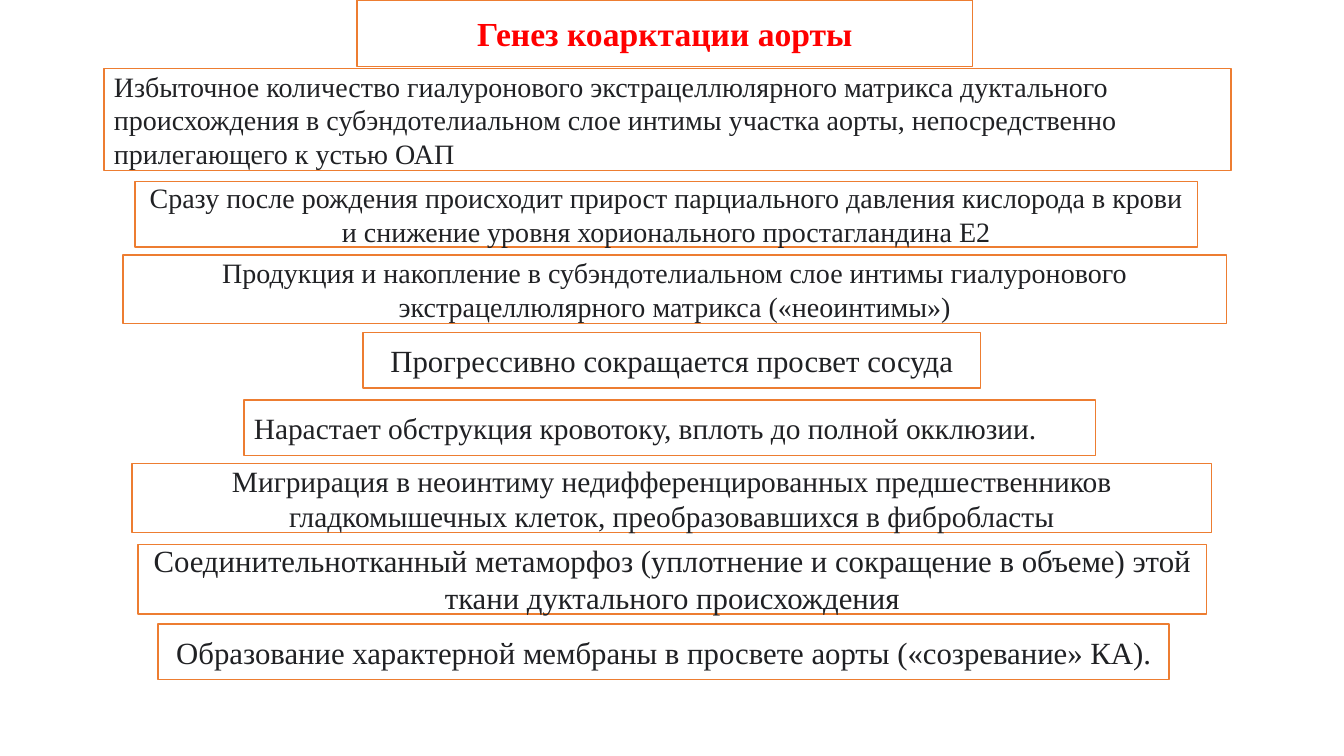
from dataclasses import dataclass

from pptx import Presentation
from pptx.dml.color import RGBColor
from pptx.enum.shapes import MSO_SHAPE
from pptx.enum.text import MSO_ANCHOR, MSO_AUTO_SIZE, PP_ALIGN
from pptx.util import Pt

RECT = MSO_SHAPE.RECTANGLE
MIDDLE = MSO_ANCHOR.MIDDLE
FIXED = MSO_AUTO_SIZE.NONE
LEFT, CENTER = PP_ALIGN.LEFT, PP_ALIGN.CENTER


@dataclass(frozen=True)
class Theme:
    font: str = "Times New Roman"
    paper: RGBColor = RGBColor(0xFF, 0xFF, 0xFF)
    edge: RGBColor = RGBColor(0xED, 0x7D, 0x31)
    ink: RGBColor = RGBColor(0x20, 0x21, 0x24)
    head: RGBColor = RGBColor(0xFF, 0x00, 0x00)
    title: int = 24
    large: int = 22
    mid: int = 21
    small: int = 20


THEME = Theme()
TITLE = "Генез коарктации аорты"
STAGES = [
    ((74.2, 49, 805, 72.7), THEME.small, LEFT,
     "Избыточное количество гиалуронового экстрацеллюлярного матрикса дуктального "
     "происхождения в субэндотелиальном слое интимы участка аорты, непосредственно "
     "прилегающего к устью ОАП"),
    ((96.5, 129.6, 759, 46.8), THEME.small, CENTER,
     "Сразу после рождения происходит прирост парциального давления кислорода в крови "
     "и снижение уровня хорионального простагландина Е2"),
    ((87.8, 182.2, 788.4, 49), THEME.small, CENTER,
     "Продукция и накопление в субэндотелиальном слое интимы гиалуронового "
     "экстрацеллюлярного матрикса («неоинтимы»)"),
    ((259.2, 237.6, 441.4, 39.6), THEME.large, CENTER,
     "Прогрессивно сокращается просвет сосуда"),
    ((174.2, 285.8, 608.4, 39.6), THEME.mid, LEFT,
     "Нарастает обструкция кровотоку, вплоть до полной окклюзии."),
    ((94.3, 331.2, 771.1, 49), THEME.mid, CENTER,
     "Мигрирация в неоинтиму недифференцированных предшественников "
     "гладкомышечных клеток, преобразовавшихся в фибробласты"),
    ((98.6, 388.8, 763.2, 49.7), THEME.large, CENTER,
     "Соединительнотканный метаморфоз (уплотнение и сокращение в объеме) этой "
     "ткани дуктального происхождения"),
    ((113, 445.7, 722.2, 39.6), THEME.large, CENTER,
     "Образование характерной мембраны в просвете аорты («созревание» КА)."),
]


def apply(target, values):
    for name, value in values.items():
        setattr(target, name, value)


def frame(shape):
    shape.fill.solid()
    shape.fill.fore_color.rgb = THEME.paper
    shape.line.color.rgb = THEME.edge
    shape.line.width = Pt(1)


def write(shape, text, size, color, align, bold=False):
    body = shape.text_frame
    body.text = text
    apply(body, {"word_wrap": True, "auto_size": FIXED, "vertical_anchor": MIDDLE})
    line = body.paragraphs[0]
    line.alignment = align
    font = line.runs[0].font
    apply(font, {"name": THEME.font, "size": Pt(size), "bold": bold})
    font.color.rgb = color


def add_title(slide, text, box):
    title = slide.shapes.title
    apply(title, dict(zip(("left", "top", "width", "height"), map(Pt, box))))
    frame(title)
    write(title, text, THEME.title, THEME.head, CENTER, True)


def add_stage(slide, box, size, align, text):
    stage = slide.shapes.add_shape(RECT, *map(Pt, box))
    stage.shadow.inherit = False
    frame(stage)
    write(stage, text, size, THEME.ink, align)


def main():
    deck = Presentation()
    apply(deck, {"slide_width": Pt(960), "slide_height": Pt(540)})
    slide = deck.slides.add_slide(deck.slide_layouts[5])
    add_title(slide, TITLE, (254.9, 0, 440, 47.5))
    for stage in STAGES:
        add_stage(slide, *stage)
    deck.save("out.pptx")


if __name__ == "__main__":
    main()
